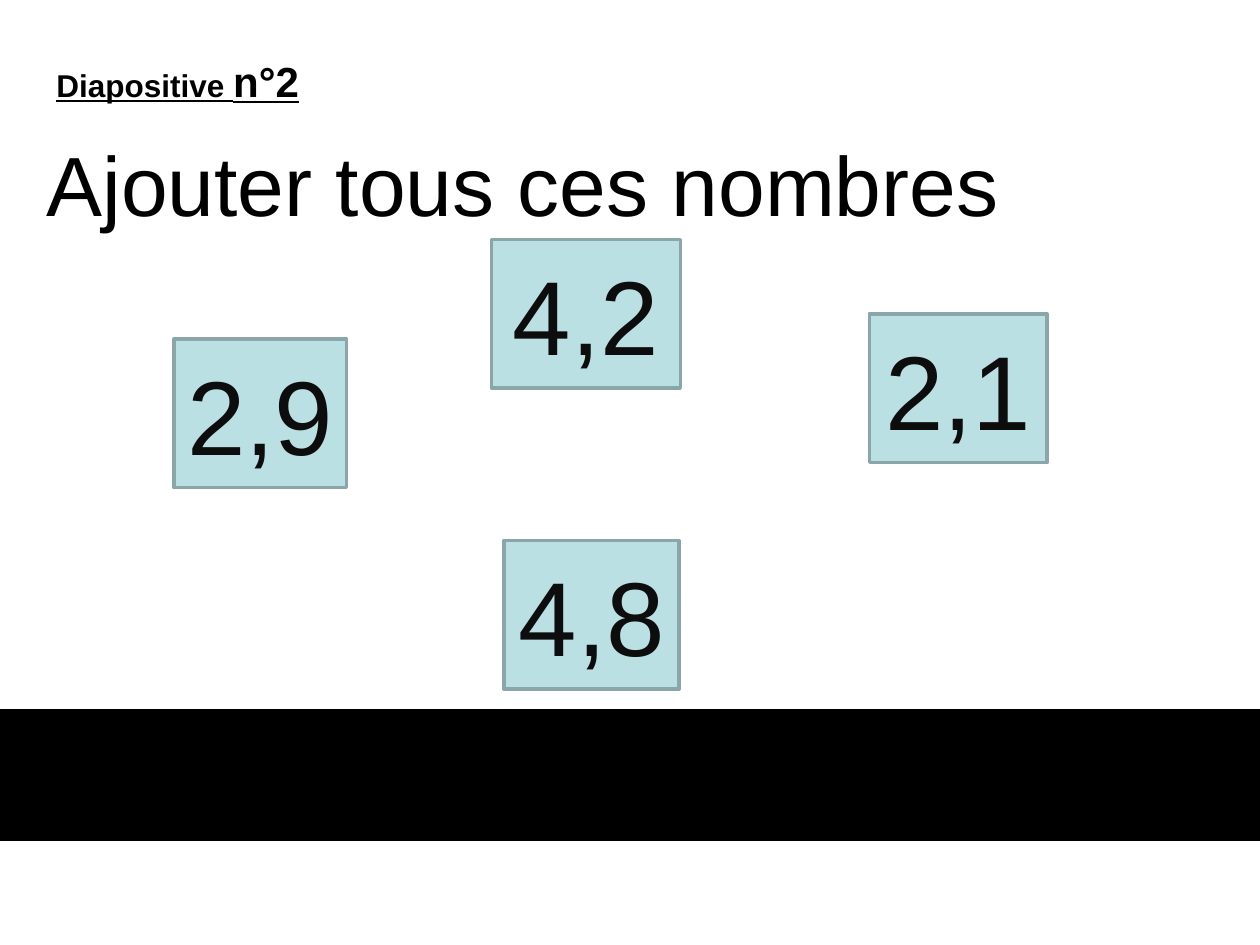
from dataclasses import dataclass

from pptx import Presentation
from pptx.dml.color import RGBColor
from pptx.enum.shapes import MSO_SHAPE
from pptx.enum.text import MSO_ANCHOR, MSO_AUTO_SIZE, PP_ALIGN
from pptx.util import Inches, Pt

RECTANGLE = MSO_SHAPE.RECTANGLE
MIDDLE = MSO_ANCHOR.MIDDLE
NO_FIT, GROW = MSO_AUTO_SIZE.NONE, MSO_AUTO_SIZE.SHAPE_TO_FIT_TEXT
LEFT, CENTER = PP_ALIGN.LEFT, PP_ALIGN.CENTER
TITLE_ONLY = 5
COLUMNS, ROWS = 100, 75


@dataclass(frozen=True)
class Theme:
    font: str = "Arial"
    ink: RGBColor = RGBColor(0, 0, 0)
    number_ink: RGBColor = RGBColor(0x0D, 0x0D, 0x0D)
    card_fill: RGBColor = RGBColor(0xBB, 0xE0, 0xE3)
    card_border: RGBColor = RGBColor(0x8A, 0xA6, 0xA8)
    border: float = 2
    label_size: int = 18
    label_number_size: int = 24
    title_size: int = 48
    number_size: int = 60


class ExerciseSlide:
    """Places elements by column and row on a 100 by 75 grid."""

    def __init__(self, deck, theme):
        self.theme = theme
        self.column = deck.slide_width / COLUMNS
        self.row = deck.slide_height / ROWS
        self.slide = deck.slides.add_slide(deck.slide_layouts[TITLE_ONLY])

    def area(self, column, row, columns, rows):
        return (round(column * self.column), round(row * self.row),
                round(columns * self.column), round(rows * self.row))

    def format_run(self, run, size, color, emphasis=False):
        font = run.font
        font.name, font.size, font.color.rgb = self.theme.font, Pt(size), color
        if emphasis:
            font.bold = font.underline = True

    def title(self, text, *cells):
        heading = self.slide.shapes.title
        heading.left, heading.top, heading.width, heading.height = self.area(*cells)
        frame = heading.text_frame
        frame.text = text
        frame.auto_size, frame.vertical_anchor = NO_FIT, MIDDLE
        frame.paragraphs[0].alignment = LEFT
        self.format_run(frame.paragraphs[0].runs[0], self.theme.title_size, self.theme.ink)

    def label(self, sized_words, *cells):
        frame = self.slide.shapes.add_textbox(*self.area(*cells)).text_frame
        frame.word_wrap, frame.auto_size = True, GROW
        for words, size in sized_words:
            run = frame.paragraphs[0].add_run()
            run.text = words
            self.format_run(run, size, self.theme.ink, emphasis=True)

    def rectangle(self, fill, border, *cells):
        box = self.slide.shapes.add_shape(RECTANGLE, *self.area(*cells))
        box.shadow.inherit = False
        box.fill.solid()
        box.fill.fore_color.rgb = fill
        box.line.color.rgb = border
        box.line.width = Pt(self.theme.border)
        return box

    def band(self, *cells):
        self.rectangle(self.theme.ink, self.theme.ink, *cells)

    def number_card(self, number, *cells):
        card = self.rectangle(self.theme.card_fill, self.theme.card_border, *cells)
        frame = card.text_frame
        frame.text = number
        frame.word_wrap, frame.vertical_anchor = True, MIDDLE
        frame.paragraphs[0].alignment = CENTER
        self.format_run(frame.paragraphs[0].runs[0], self.theme.number_size,
                        self.theme.number_ink)


def main():
    deck = Presentation()
    deck.slide_width, deck.slide_height = Inches(10), Inches(7.5)
    theme = Theme()
    exercise = ExerciseSlide(deck, theme)

    exercise.label([("Diapositive ", theme.label_size), ("n°2", theme.label_number_size)],
                   3.5, 3.9, 48, 5.1)
    exercise.band(0, 56.4, COLUMNS, 10.2)
    exercise.title("Ajouter tous ces nombres", 2.7, 6.5, 85, 16.1)

    card_rows = 11.8
    for number, column, row, columns in (
        ("2,9", 13.8, 26.9, 13.7),
        ("2,1", 69, 24.9, 14.1),
        ("4,2", 39, 19, 15),
        ("4,8", 40, 42.9, 13.9),
    ):
        exercise.number_card(number, column, row, columns, card_rows)

    deck.save("out.pptx")


if __name__ == "__main__":
    main()
